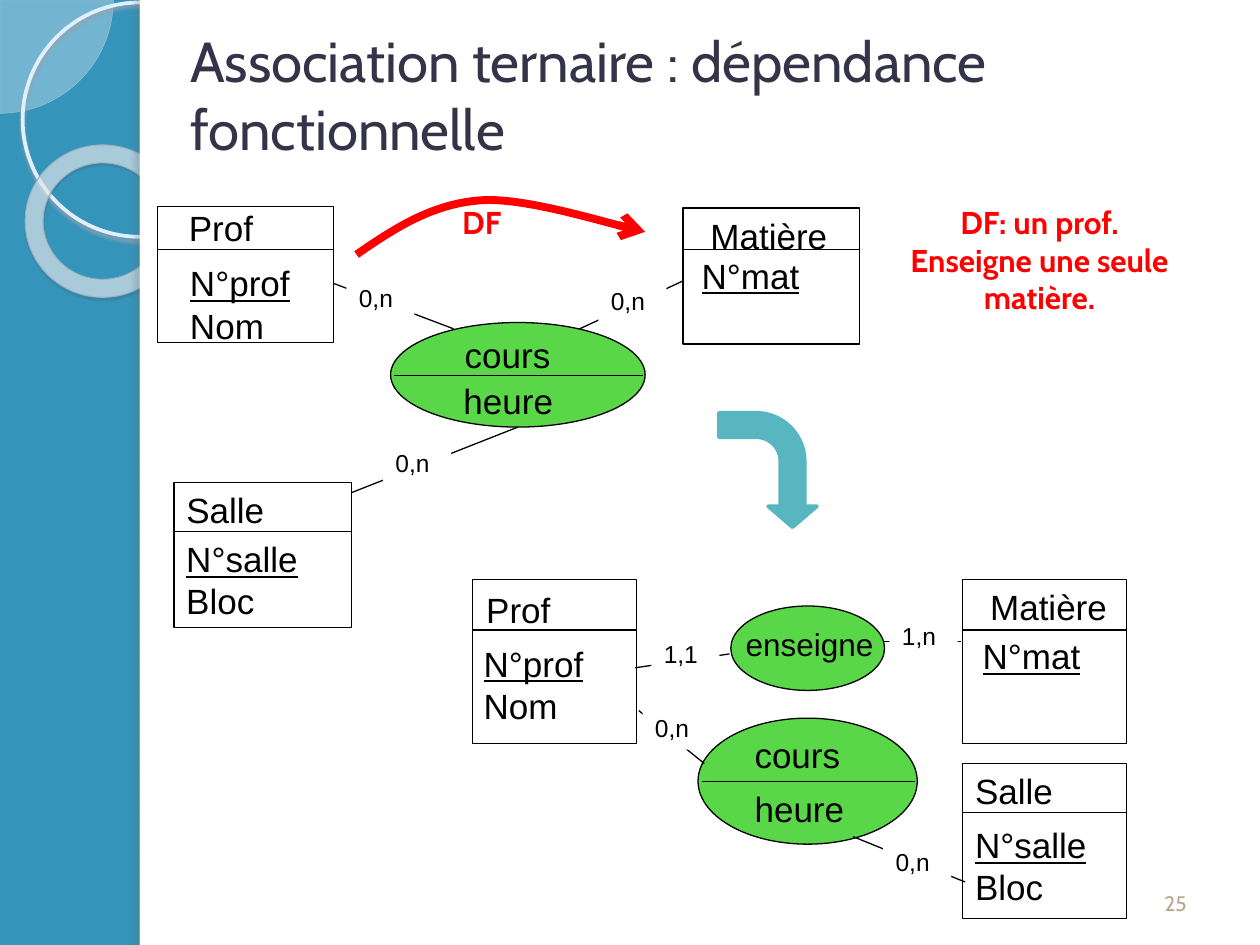
from collections import namedtuple
from math import cos, pi, sin

from lxml import etree
from pptx import Presentation
from pptx.dml.color import RGBColor
from pptx.enum.shapes import MSO_CONNECTOR, MSO_SHAPE
from pptx.enum.text import MSO_ANCHOR, MSO_AUTO_SIZE, PP_ALIGN
from pptx.oxml.ns import qn
from pptx.util import Inches, Pt

RECTANGLE, OVAL = MSO_SHAPE.RECTANGLE, MSO_SHAPE.OVAL
DONUT, BENT_ARROW = MSO_SHAPE.DONUT, MSO_SHAPE.BENT_ARROW
STRAIGHT = MSO_CONNECTOR.STRAIGHT
TOP, BOTTOM = MSO_ANCHOR.TOP, MSO_ANCHOR.BOTTOM
LEFT, CENTER = PP_ALIGN.LEFT, PP_ALIGN.CENTER
FIT_SHAPE, NO_FIT = MSO_AUTO_SIZE.SHAPE_TO_FIT_TEXT, MSO_AUTO_SIZE.NONE

BLACK = RGBColor(0x00, 0x00, 0x00)
WHITE = RGBColor(0xFF, 0xFF, 0xFF)
RED = RGBColor(0xFF, 0x00, 0x00)
GREEN = RGBColor(0x5A, 0xD7, 0x49)
TEAL = RGBColor(0x58, 0xB6, 0xC0)
BLUE = RGBColor(0x34, 0x94, 0xBA)
TITLE_INK = RGBColor(0x35, 0x33, 0x47)
NUMBER_INK = RGBColor(0xB5, 0xA7, 0x88)
PALE = RGBColor(0xF5, 0xF9, 0xFD)
RING = RGBColor(0xE0, 0xF0, 0xFF)
PIE_EDGE = RGBColor(0xA6, 0xBC, 0xCF)
DONUT_EDGE = RGBColor(0x99, 0xB0, 0xC4)

WIDTHS = {"Prof": 0.71, "N°prof": 1, "Matière": 1.13, "N°mat": 1, "cours": 0.9,
          "heure": 0.92, "N°salle": 1.1, "enseigne": 1.23, "DF": 0.54}
Box = namedtuple("Box", "left top width height")


def inside(box, left, top, width=0, height=0):
    return Box(box.left + left, box.top + top, width, height)


def paint(shape, fill=None, line=None, weight=0.75):
    shape.shadow.inherit = False
    if fill is None:
        shape.fill.background()
    else:
        shape.fill.solid()
        shape.fill.fore_color.rgb = fill
    if line is None:
        shape.line.fill.background()
    else:
        shape.line.color.rgb = line
        shape.line.width = Pt(weight)
    return shape


def add_shape(page, kind, box, fill=None, line=None, weight=0.75):
    return paint(page.shapes.add_shape(kind, *map(Inches, box)), fill, line, weight)


def fade(shape, percent):
    color = shape.fill._xPr.find(qn("a:solidFill"))[0]
    etree.SubElement(color, qn("a:alpha"), val=str(percent * 1000))


def add_shadow(shape, color, percent, blur, distance, angle):
    effects = shape._element.spPr.find(qn("a:effectLst"))
    shadow = etree.SubElement(effects, qn("a:outerShdw"), blurRad=str(Pt(blur)),
                              dist=str(Pt(distance)), dir=str(angle * 60000))
    tint = etree.SubElement(shadow, qn("a:srgbClr"), val=color)
    etree.SubElement(tint, qn("a:alpha"), val=str(percent * 1000))


def write(shape, lines, size, color=BLACK, font="Arial", bold=False, align=LEFT,
          anchor=TOP, wrap=True, underline_first=False):
    frame = shape.text_frame
    frame.word_wrap = wrap
    frame.vertical_anchor = anchor
    frame.text = "\n".join(lines)
    for index, para in enumerate(frame.paragraphs):
        para.alignment = align
        para.font.name = font
        para.font.size = Pt(size)
        para.font.bold = bold
        para.font.color.rgb = color
        para.font.underline = underline_first and index == 0


def add_text(page, box, lines, size=20, **style):
    height = 0.1 + 0.0167 * size * len(lines)
    area = box._replace(width=WIDTHS[lines[0]], height=height)
    shape = page.shapes.add_textbox(*map(Inches, area))
    write(shape, lines, size, wrap=False, **style)
    shape.text_frame.auto_size = FIT_SHAPE


def add_line(page, box, start, end):
    ends = [inside(box, *point)[:2] for point in (start, end)]
    line = page.shapes.add_connector(STRAIGHT, *map(Inches, ends[0] + ends[1]))
    line.line.color.rgb = BLACK
    line.line.width = Pt(0.75)
    etree.SubElement(line._element.spPr, qn("a:effectLst"))


def add_path(page, points, closed):
    corners = [(Inches(x), Inches(y)) for x, y in points]
    builder = page.shapes.build_freeform(*corners[0])
    builder.add_line_segments(corners[1:], close=closed)
    return builder.convert_to_shape()


def add_entity(page, box, name, split, attributes, attributes_at, name_at=None):
    shape = add_shape(page, RECTANGLE, box, WHITE, BLACK)
    add_line(page, box, (0, split), (box.width, split))
    if name_at is None:
        write(shape, [name], 20)
    else:
        add_text(page, inside(box, *name_at), [name])
    add_text(page, inside(box, *attributes_at), attributes, underline_first=True)


def add_association(page, box, texts, size=20, split=None):
    add_shape(page, OVAL, box, GREEN, BLACK)
    if split is not None:
        add_line(page, box, (0.03, split), (box.width - 0.02, split))
    for text, left, top in texts:
        add_text(page, inside(box, left, top), [text], size)


def add_links(page, box, links):
    for start, end, label, label_at in links:
        add_line(page, box, start, end)
        tag = add_shape(page, RECTANGLE, inside(box, *label_at, 0.54, 0.34), WHITE)
        write(tag, [label], 14)


def add_decoration(page, box):
    page.background.fill.solid()
    page.background.fill.fore_color.rgb = BLUE
    arc = [(0.9 * cos(step * pi / 80), 0.9 * sin(step * pi / 80)) for step in range(41)]
    quarter = add_path(page, [(0, 0)] + arc, True)
    fade(paint(quarter, PALE, PIE_EDGE, 0.25), 33)
    ring = add_shape(page, OVAL, inside(box, 0.18, 0.02, 1.86, 1.86), None, RING, 2.15)
    add_shadow(ring, "94A2AF", 85, 2, 2, 90)
    donut = add_shape(page, DONUT, inside(box, 0.2, 1.15, 1.23, 1.21), PALE, DONUT_EDGE, 0.58)
    donut.adjustments[0] = 0.118
    fade(donut, 60)
    add_shadow(donut, "475159", 35, 1, 1.2, 75)
    edge = add_shape(page, RECTANGLE, inside(box, 1.11, 0, 0.08, box.height), WHITE)
    add_shadow(edge, "666D73", 25, 3, 3, 180)
    add_shape(page, RECTANGLE, inside(box, 1.11, 0, box.width - 1.11, box.height), WHITE)


def add_title(page, box):
    title = page.shapes.title
    title.left, title.top, title.width, title.height = map(Inches, box)
    write(title, ["Association ternaire : dépendance fonctionnelle"], 32.2, TITLE_INK, "Cabin")
    title.text_frame.auto_size = NO_FIT


def add_dependency(page, box):
    def bezier(a, b, c, d):
        for step in range(1, 21):
            t = step / 20
            weights = ((1 - t) ** 3, 3 * t * (1 - t) ** 2, 3 * t * t * (1 - t), t ** 3)
            yield tuple(sum(w * p[axis] for w, p in zip(weights, (a, b, c, d)))
                        for axis in (0, 1))

    knots = [inside(box, *knot)[:2] for knot in (
        (0, 0.46), (0.29, 0.26), (0.59, 0.06), (0.98, 0.03),
        (1.36, 0), (2.07, 0.24), (2.29, 0.28))]
    curve = paint(add_path(page, knots[:1] + list(bezier(*knots[:4]))
                           + list(bezier(*knots[3:])), False), None, RED, 4.5)
    etree.SubElement(curve.line._get_or_add_ln(), qn("a:tailEnd"), type="arrow")
    add_text(page, inside(box, 0.74, 0), ["DF"], 18, color=RED, font="Cabin", bold=True)


def add_ternary_model(page, box):
    add_entity(page, inside(box, 0, 0.09, 1.4, 1.08), "Prof", 0.34,
               ["N°prof", "Nom"], (0.16, 0.39), (0.15, -0.05))
    add_entity(page, inside(box, 4.17, 0.1, 1.4, 1.08), "Matière", 0.33,
               ["N°mat"], (0.05, 0.32), (0.12, 0))
    add_entity(page, inside(box, 0.13, 2.28, 1.41, 1.15), "Salle", 0.39,
               ["N°salle", "Bloc"], (0, 0.39))
    add_association(page, inside(box, 1.85, 1.01, 2.02, 0.83),
                    [("cours", 0.49, 0.04), ("heure", 0.48, 0.4)], split=0.42)
    add_links(page, box, [
        ((1.4, 0.7), (2.35, 1.06), "0,n", (1.5, 0.65)),
        ((3.35, 1.06), (4.17, 0.68), "0,n", (3.5, 0.67)),
        ((2.86, 1.84), (1.54, 2.36), "0,n", (1.79, 1.96))])
    add_dependency(page, inside(box, 1.58, 0.01))


def add_decomposed_model(page, box):
    add_entity(page, inside(box, 0, 0, 1.3, 1.3), "Prof", 0.4,
               ["N°prof", "Nom"], (-0.01, 0.45), (0.01, 0.02))
    add_entity(page, inside(box, 3.89, 0, 1.3, 1.3), "Matière", 0.4,
               ["N°mat"], (0.06, 0.39), (0.12, 0))
    add_entity(page, inside(box, 3.89, 1.46, 1.3, 1.23), "Salle", 0.39,
               ["N°salle", "Bloc"], (0, 0.43))
    add_association(page, inside(box, 1.79, 1.1, 1.74, 1),
                    [("cours", 0.35, 0.07), ("heure", 0.35, 0.5)], split=0.5)
    add_association(page, inside(box, 2.05, 0.21, 1.22, 0.67), [("enseigne", 0.02, 0.1)], 18)
    add_links(page, box, [
        ((1.29, 0.7), (2.04, 0.59), "1,1", (1.42, 0.42)),
        ((3.27, 0.49), (3.88, 0.49), "1,n", (3.31, 0.28)),
        ((3.02, 2.04), (3.91, 2.4), "0,n", (3.26, 2.07)),
        ((1.32, 1.04), (1.84, 1.46), "0,n", (1.35, 1.01))])


def add_turn_arrow(page, box):
    arrow = add_shape(page, BENT_ARROW, box, TEAL, TEAL, 2)
    for index, value in enumerate((0.25, 0.25, 0.215, 0.495)):
        arrow.adjustments[index] = value
    arrow.rotation = 270
    frame = arrow._element.spPr.find(qn("a:xfrm"))
    frame.set("flipH", "1")
    frame.set("flipV", "1")


def add_note(page, box):
    note = page.shapes.add_textbox(*map(Inches, box))
    write(note, ["DF: un prof. Enseigne une seule matière."], 18, RED, "Cabin", True, CENTER)


def add_page_number(page, box):
    number = page.shapes.add_textbox(*map(Inches, box))
    write(number, ["25"], 12, NUMBER_INK, "Cabin", align=CENTER, anchor=BOTTOM)


def main():
    deck = Presentation()
    deck.slide_width, deck.slide_height = Inches(10), Inches(7.5)
    page = deck.slides.add_slide(deck.slide_layouts[5])
    add_decoration(page, Box(0, 0, 10, 7.5))
    add_title(page, Box(1.41, 0.16, 7.73, 1.02))
    add_ternary_model(page, Box(1.25, 1.55, 5.57, 3.43))
    add_decomposed_model(page, Box(3.75, 4.6, 5.19, 2.69))
    add_turn_arrow(page, Box(5.64, 3.34, 0.91, 0.78))
    add_note(page, Box(7.08, 1.56, 2.34, 1.01))
    add_page_number(page, Box(9.06, 6.8, 0.54, 0.52))
    title = page.shapes.title._element
    title.getparent().append(title)
    deck.save("out.pptx")


if __name__ == "__main__":
    main()
